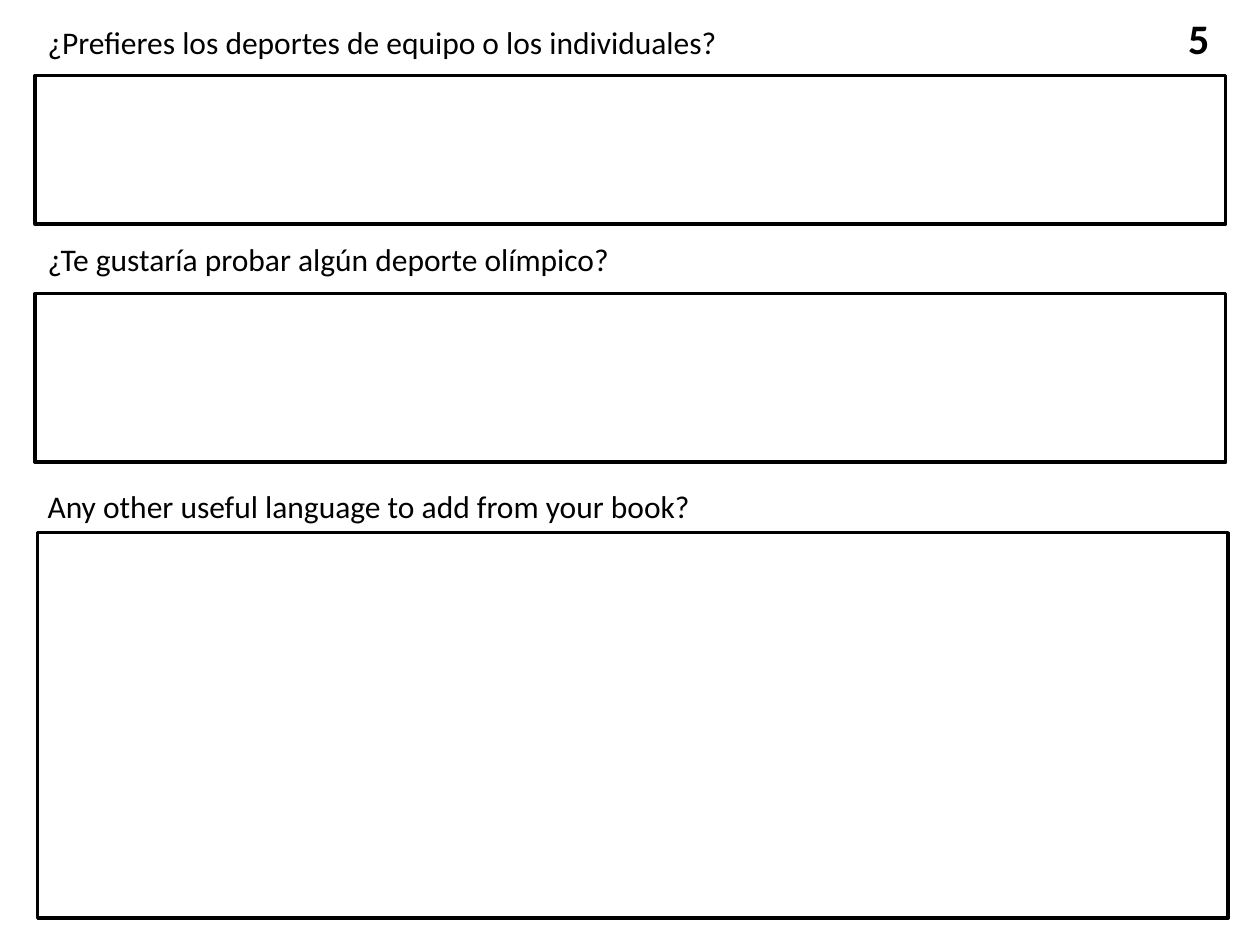
from dataclasses import dataclass

from pptx import Presentation
from pptx.dml.color import RGBColor
from pptx.enum.shapes import MSO_SHAPE
from pptx.enum.text import MSO_AUTO_SIZE
from pptx.util import Cm, Pt

RECT = MSO_SHAPE.RECTANGLE
GROW = MSO_AUTO_SIZE.SHAPE_TO_FIT_TEXT


@dataclass(frozen=True)
class Theme:
    ink: RGBColor = RGBColor(0, 0, 0)
    font: str = "Calibri"
    body: Pt = Pt(18)
    large: Pt = Pt(24)
    line: Pt = Pt(2)


theme = Theme()
deck = Presentation()
deck.slide_width = Cm(25.4)
deck.slide_height = Cm(19.05)
slide = deck.slides.add_slide(deck.slide_layouts[6])


def add_label(text, left, top, width, height, size, bold=False, wrap=False):
    label = slide.shapes.add_textbox(Cm(left), Cm(top), Cm(width), Cm(height))
    frame = label.text_frame
    frame.text = text
    frame.word_wrap = wrap
    frame.auto_size = GROW
    font = frame.paragraphs[0].runs[0].font
    font.name = theme.font
    font.size = size
    font.bold = bold
    font.color.rgb = theme.ink


margin = 0.71
prompts = [
    ("¿Prefieres los deportes de equipo o los individuales?", 0.33, 14.17, margin, 1.52, 3),
    ("¿Te gustaría probar algún deporte olímpico?", 4.72, 11.96, margin, 5.92, 3.4),
    ("Any other useful language to add from your book?", 9.7, 13.61, 0.76, 10.74, 7.77),
]

for text, top, width, left, box_top, height in prompts:
    box = slide.shapes.add_shape(RECT, Cm(left), Cm(box_top), Cm(24), Cm(height))
    box.shadow.inherit = False
    box.fill.background()
    box.line.color.rgb = theme.ink
    box.line.width = theme.line
    add_label(text, margin, top, width, 1.02, theme.body)

add_label("5", 23.7, 0.13, 1.7, 1.27, theme.large, bold=True, wrap=True)

deck.save("out.pptx")
